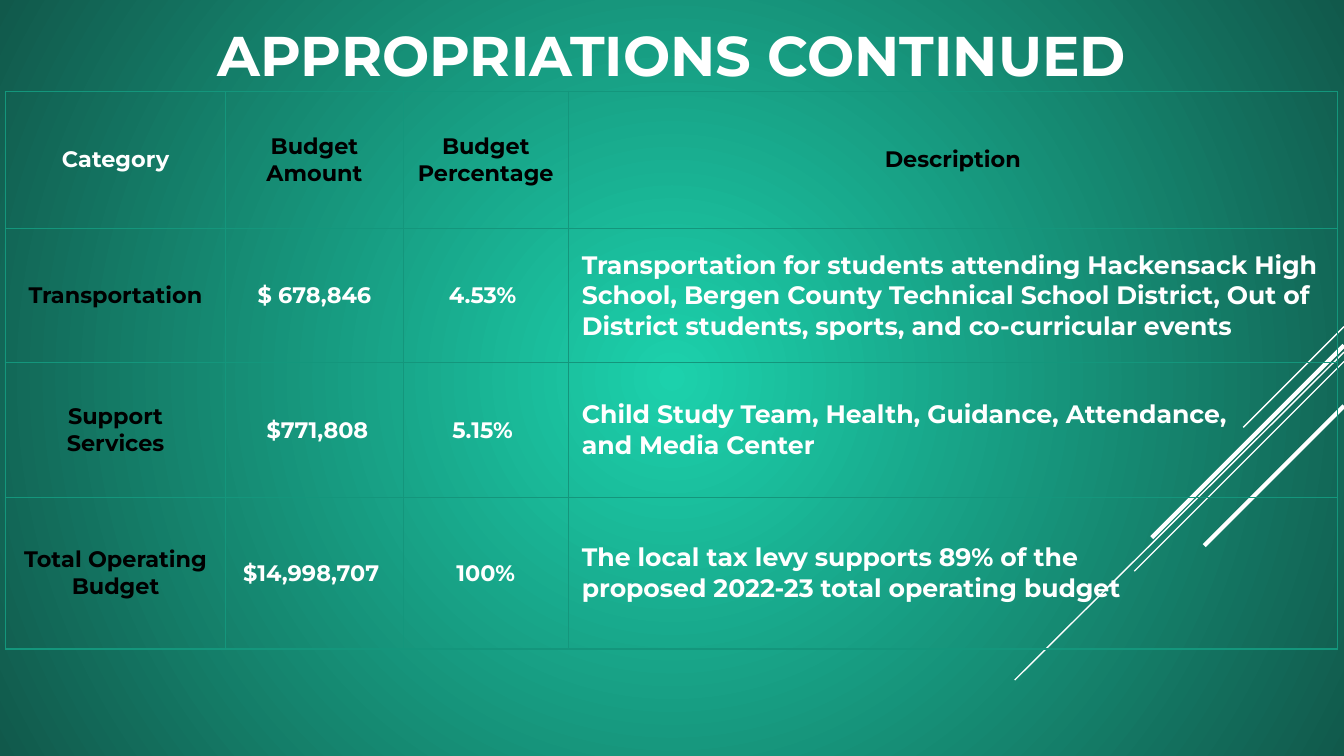
from dataclasses import dataclass
from lxml.etree import SubElement
from pptx import Presentation
from pptx.dml.color import RGBColor as Rgb
from pptx.enum.shapes import MSO_CONNECTOR as Connector
from pptx.enum.text import MSO_ANCHOR as Anchor, PP_ALIGN as Align
from pptx.oxml import parse_xml
from pptx.oxml.ns import nsdecls, qn
from pptx.util import Inches, Pt


@dataclass(frozen=True)
class Theme:
    font: str = "Montserrat"
    light: str = "FFFFFF"
    dark: str = "000000"
    glow: str = "1CD1AC"
    edge: str = "11594B"
    grid: str = "14967C"
    title_size: float = 30
    label_size: float = 12
    description_size: float = 13.5
    grid_width: float = 0.75


theme = Theme()


def write(frame, text, size, color, align=Align.CENTER):
    frame.word_wrap = True
    for number, line in enumerate(text.split("\n")):
        paragraph = frame.add_paragraph() if number else frame.paragraphs[0]
        paragraph.alignment = align
        run = paragraph.add_run()
        run.text = line
        run.font.name = theme.font
        run.font.size = Pt(size)
        run.font.bold = True
        run.font.color.rgb = Rgb.from_string(color)


def draw_borders(cell):
    properties = cell._tc.get_or_add_tcPr()
    for position, side in enumerate(("lnL", "lnR", "lnT", "lnB")):
        properties.insert(position, parse_xml(
            f'<a:{side} {nsdecls("a")} w="{Pt(theme.grid_width)}"><a:solidFill>'
            f'<a:srgbClr val="{theme.grid}"/></a:solidFill></a:{side}>'))


deck = Presentation()
deck.slide_width = Inches(10)
deck.slide_height = Inches(10 * 9 / 16)
slide = deck.slides.add_slide(deck.slide_layouts[6])

backdrop = slide.background.fill
backdrop.gradient()
for stop, color in zip(backdrop.gradient_stops, (theme.glow, theme.edge)):
    stop.color.rgb = Rgb.from_string(color)
direction = slide._element.find(".//" + qn("a:lin"))
direction.getparent().replace(direction, parse_xml(
    f'<a:path {nsdecls("a")} path="circle">'
    '<a:fillToRect l="50000" t="50000" r="50000" b="50000"/></a:path>'))

streaks = [
    (2.43, 9.25, 3.18, 0.75),
    (2.62, 7.55, 5.06, 0.75),
    (2.69, 8.44, 4.25, 0.75),
    (2.57, 8.57, 4, 2.25),
    (3.02, 8.96, 4.06, 2.25),
]
for start_y, end_x, end_y, width in streaks:
    streak = slide.shapes.add_connector(
        Connector.STRAIGHT, Inches(10), Inches(start_y), Inches(end_x), Inches(end_y))
    streak.line.color.rgb = Rgb.from_string(theme.light)
    streak.line.width = Pt(width)
    SubElement(streak._element.spPr, qn("a:effectLst"))

title = slide.shapes.add_textbox(
    Inches(1.3), Inches(0.15), Inches(7.4), Inches(0.52)).text_frame
title.margin_left = title.margin_right = title.margin_top = title.margin_bottom = 0
write(title, "APPROPRIATIONS CONTINUED", size=theme.title_size, color=theme.light)

appropriations = [
    ("Category", "Budget Amount", "Budget Percentage", "Description"),
    ("Transportation", "$ 678,846", "4.53% ",
     "Transportation for students attending Hackensack High School, Bergen County Technical "
     "School District, Out of District students, sports, and co-curricular events"),
    ("Support Services", " $771,808", "5.15% ",
     "Child Study Team, Health, Guidance, Attendance,\nand Media Center"),
    ("Total Operating Budget", "$14,998,707 ", "100%",
     "The local tax levy supports 89% of the\nproposed 2022-23 total operating budget"),
]
column_widths = (1.64, 1.32, 1.23, 5.72)
row_heights = (1.02, 1, 1, 1.13)
budget = slide.shapes.add_table(
    len(row_heights), len(column_widths), Inches(0.04), Inches(0.68),
    Inches(sum(column_widths)), Inches(sum(row_heights))).table
budget.first_row = budget.horz_banding = False
for column, width in zip(budget.columns, column_widths):
    column.width = Inches(width)
for row, height in zip(budget.rows, row_heights):
    row.height = Inches(height)

for r, entries in enumerate(appropriations):
    for c, entry in enumerate(entries):
        cell = budget.cell(r, c)
        cell.fill.background()
        draw_borders(cell)
        describes = r > 0 and c == 3
        write(cell.text_frame, entry,
              size=theme.description_size if describes else theme.label_size,
              color=theme.dark if (r == 0) != (c == 0) else theme.light,
              align=Align.LEFT if describes else Align.CENTER)
        cell.vertical_anchor = Anchor.MIDDLE
        cell.margin_left = cell.margin_right = Inches(0.1)
        cell.margin_top = cell.margin_bottom = Inches(0.07)

deck.save("out.pptx")
